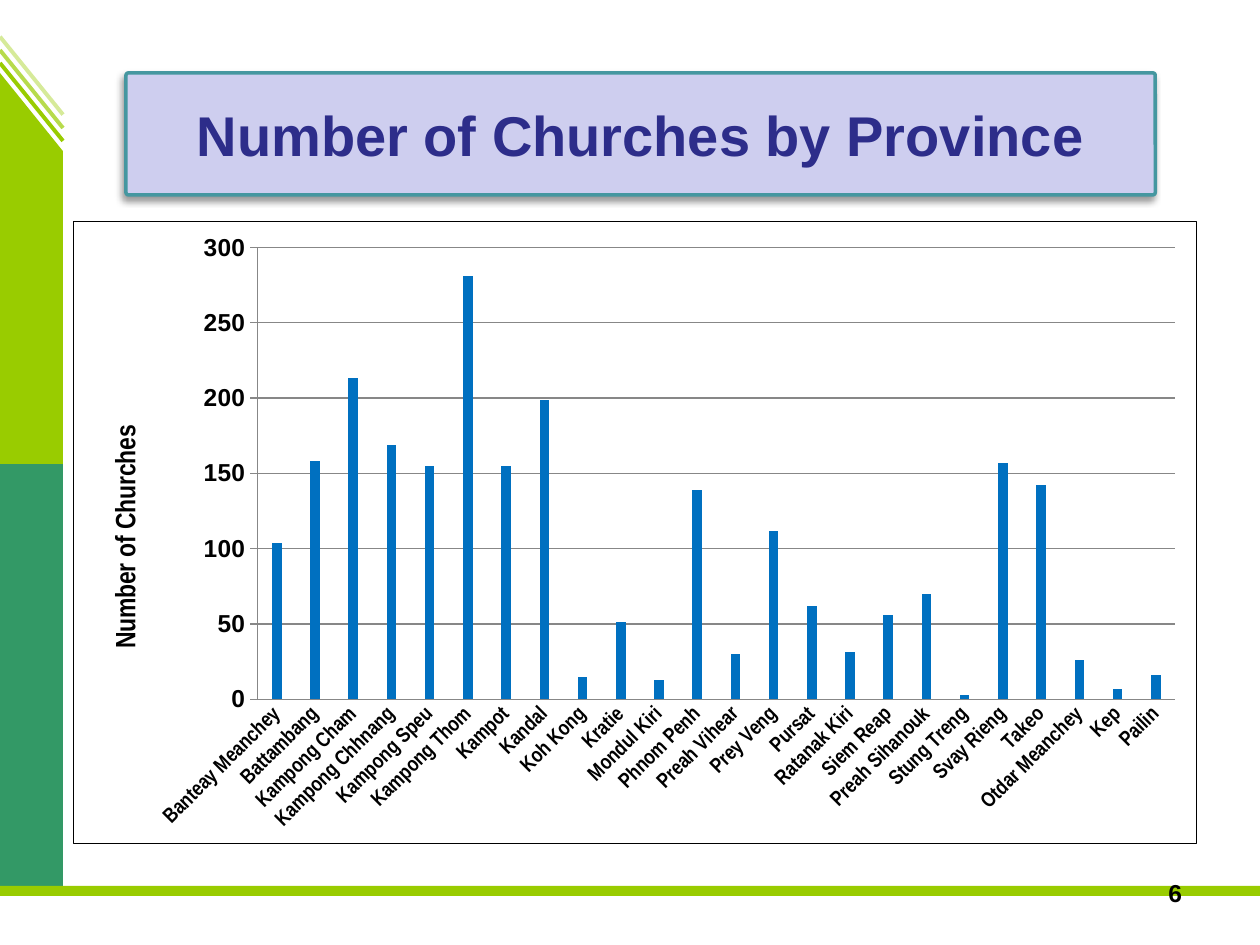
from pptx import Presentation
from pptx.chart.data import CategoryChartData
from pptx.dml.color import RGBColor
from pptx.enum.chart import XL_CHART_TYPE, XL_TICK_MARK
from pptx.enum.shapes import MSO_CONNECTOR, MSO_SHAPE
from pptx.enum.text import MSO_ANCHOR, PP_ALIGN
from pptx.oxml import parse_xml
from pptx.oxml.ns import nsdecls, qn
from pptx.util import Cm, Pt
from lxml.etree import SubElement

LIME = "99CC00"
GREEN = "339966"
GRAY = "878787"
BLACK = "000000"

CHURCHES = {
    "Banteay Meanchey": 104, "Battambang": 158, "Kampong Cham": 213,
    "Kampong Chhnang": 169, "Kampong Speu": 155, "Kampong Thom": 281,
    "Kampot": 155, "Kandal": 199, "Koh Kong": 15, "Kratie": 51,
    "Mondul Kiri": 13, "Phnom Penh": 139, "Preah Vihear": 30,
    "Prey Veng": 112, "Pursat": 62, "Ratanak Kiri": 31, "Siem Reap": 56,
    "Preah Sihanouk": 70, "Stung Treng": 3, "Svay Rieng": 157,
    "Takeo": 142, "Otdar Meanchey": 26, "Kep": 7, "Pailin": 16,
}


def color(value):
    return RGBColor.from_string(value)


def style_font(font, size, name="Arial", value=BLACK, bold=True):
    font.size = Pt(size)
    font.name = name
    font.bold = bold
    font.color.rgb = color(value)


def add_block(slide, kind, left, top, width, height, fill):
    shape = slide.shapes.add_shape(kind, Cm(left), Cm(top), Cm(width), Cm(height))
    shape.shadow.inherit = False
    shape.fill.solid()
    shape.fill.fore_color.rgb = color(fill)
    shape.line.fill.background()
    return shape


def add_stripe(slide, top, opacity):
    stripe = slide.shapes.add_connector(
        MSO_CONNECTOR.STRAIGHT, 0, Cm(top), Cm(1.27), Cm(top + 1.57))
    stripe.line.width = Pt(2.25)
    stripe.line.color.rgb = color(LIME)
    properties = stripe.element.spPr
    SubElement(properties, qn("a:effectLst"))
    if opacity < 100:
        fill = properties.find(".//" + qn("a:srgbClr"))
        SubElement(fill, qn("a:alpha")).set("val", str(opacity * 1000))


def write_text(shape, text, size, alignment, value=BLACK):
    shape.text_frame.word_wrap = True
    shape.text_frame.text = text
    paragraph = shape.text_frame.paragraphs[0]
    paragraph.alignment = alignment
    style_font(paragraph.runs[0].font, size, value=value)


def add_title(slide, text):
    shape = add_block(slide, MSO_SHAPE.ROUNDED_RECTANGLE, 2.54, 1.47, 20.75, 2.46, "CECEEF")
    shape.adjustments[0] = 0.02
    shape.line.color.rgb = color("4597A0")
    shape.line.width = Pt(2)
    shape.text_frame.vertical_anchor = MSO_ANCHOR.MIDDLE
    write_text(shape, text, 32, PP_ALIGN.CENTER, "2D2D8A")
    # Soft shadow towards the lower left
    effects = shape.element.spPr.find(qn("a:effectLst"))
    effects.append(parse_xml(
        f'<a:outerShdw {nsdecls("a")} blurRad="{Pt(4)}" dist="{Pt(3)}" '
        'dir="8100000" algn="tr" rotWithShape="0"><a:srgbClr val="000000">'
        '<a:alpha val="40000"/></a:srgbClr></a:outerShdw>'))


def set_layout(parent, position, **values):
    """Place a chart part by fractions of the chart's size."""
    for old in parent.findall(qn("c:layout")):
        parent.remove(old)
    target = '<c:layoutTarget val="inner"/>' if "w" in values else ""
    modes = "".join(f'<c:{key}Mode val="edge"/>' for key in "xy")
    sizes = "".join(f'<c:{key} val="{value}"/>' for key, value in values.items())
    parent.insert(position, parse_xml(
        f'<c:layout {nsdecls("c")}><c:manualLayout>{target}{modes}{sizes}'
        '</c:manualLayout></c:layout>'))


def style_axis(axis, size, font_name, tick):
    style_font(axis.tick_labels.font, size, font_name)
    axis.major_tick_mark = tick
    axis.minor_tick_mark = XL_TICK_MARK.NONE
    axis.format.line.color.rgb = color(GRAY)
    axis.format.line.width = Pt(0.75)


def add_church_chart(slide):
    data = CategoryChartData()
    data.categories = list(CHURCHES)
    data.add_series("Series 1", list(CHURCHES.values()))
    chart = slide.shapes.add_chart(
        XL_CHART_TYPE.COLUMN_CLUSTERED,
        Cm(1.47), Cm(4.45), Cm(22.66), Cm(12.57), data).chart
    chart.has_legend = False
    chart.has_title = False
    style_font(chart.font, 18, bold=False)

    # Columns
    plot = chart.plots[0]
    plot.gap_width = 300
    plot.vary_by_categories = False
    series = plot.series[0]
    series.format.fill.solid()
    series.format.fill.fore_color.rgb = color("0070C0")

    # Axes
    provinces, counts = chart.category_axis, chart.value_axis
    style_axis(provinces, 12, "Arial Narrow", XL_TICK_MARK.NONE)
    style_axis(counts, 14, "Arial", XL_TICK_MARK.OUTSIDE)
    counts.minimum_scale, counts.maximum_scale, counts.major_unit = 0, 300, 50
    counts.has_major_gridlines = True
    counts.major_gridlines.format.line.color.rgb = color(GRAY)
    counts.major_gridlines.format.line.width = Pt(0.75)
    title_frame = counts.axis_title.text_frame
    title_frame.text = "Number of Churches"
    style_font(title_frame.paragraphs[0].runs[0].font, 16, "Arial Narrow")

    # Text rotation, placement and outer border
    root = chart.element
    root.xpath(".//c:catAx/c:txPr/a:bodyPr")[0].set("rot", "-2700000")
    axis_title = root.xpath(".//c:valAx/c:title")[0]
    body = axis_title.find(".//" + qn("a:bodyPr"))
    body.set("rot", "-5400000")
    body.set("vert", "horz")
    set_layout(axis_title, 1, x=0.03, y=0.32)
    set_layout(root.xpath(".//c:plotArea")[0], 0, x=0.164, y=0.042, w=0.817, h=0.726)
    root.find(qn("c:chart")).addnext(parse_xml(
        f'<c:spPr {nsdecls("c", "a")}><a:noFill/><a:ln w="{Pt(0.75)}"><a:solidFill>'
        f'<a:srgbClr val="{BLACK}"/></a:solidFill></a:ln></c:spPr>'))


def add_side_band(slide):
    add_block(slide, MSO_SHAPE.RECTANGLE, 0, 9.35, 1.27, 8.51, GREEN)
    slope = add_block(slide, MSO_SHAPE.FLOWCHART_MANUAL_INPUT, 0, 1.47, 1.27, 7.88, LIME)
    slope.element.spPr.find(qn("a:xfrm")).set("flipH", "1")
    for top, opacity in ((1.27, 100), (1.01, 70), (0.74, 40)):
        add_stripe(slide, top, opacity)
    add_block(slide, MSO_SHAPE.RECTANGLE, 0, 17.86, 25.4, 0.2, LIME)


def main():
    presentation = Presentation()
    presentation.slide_width = Cm(25.4)
    presentation.slide_height = Cm(19.05)
    slide = presentation.slides.add_slide(presentation.slide_layouts[6])

    add_side_band(slide)
    add_title(slide, "Number of Churches by Province")
    add_church_chart(slide)

    # Page number
    number = slide.shapes.add_textbox(Cm(22.43), Cm(17.58), Cm(1.65), Cm(1.07))
    write_text(number, "6", 14, PP_ALIGN.RIGHT)

    presentation.save("out.pptx")


if __name__ == "__main__":
    main()
